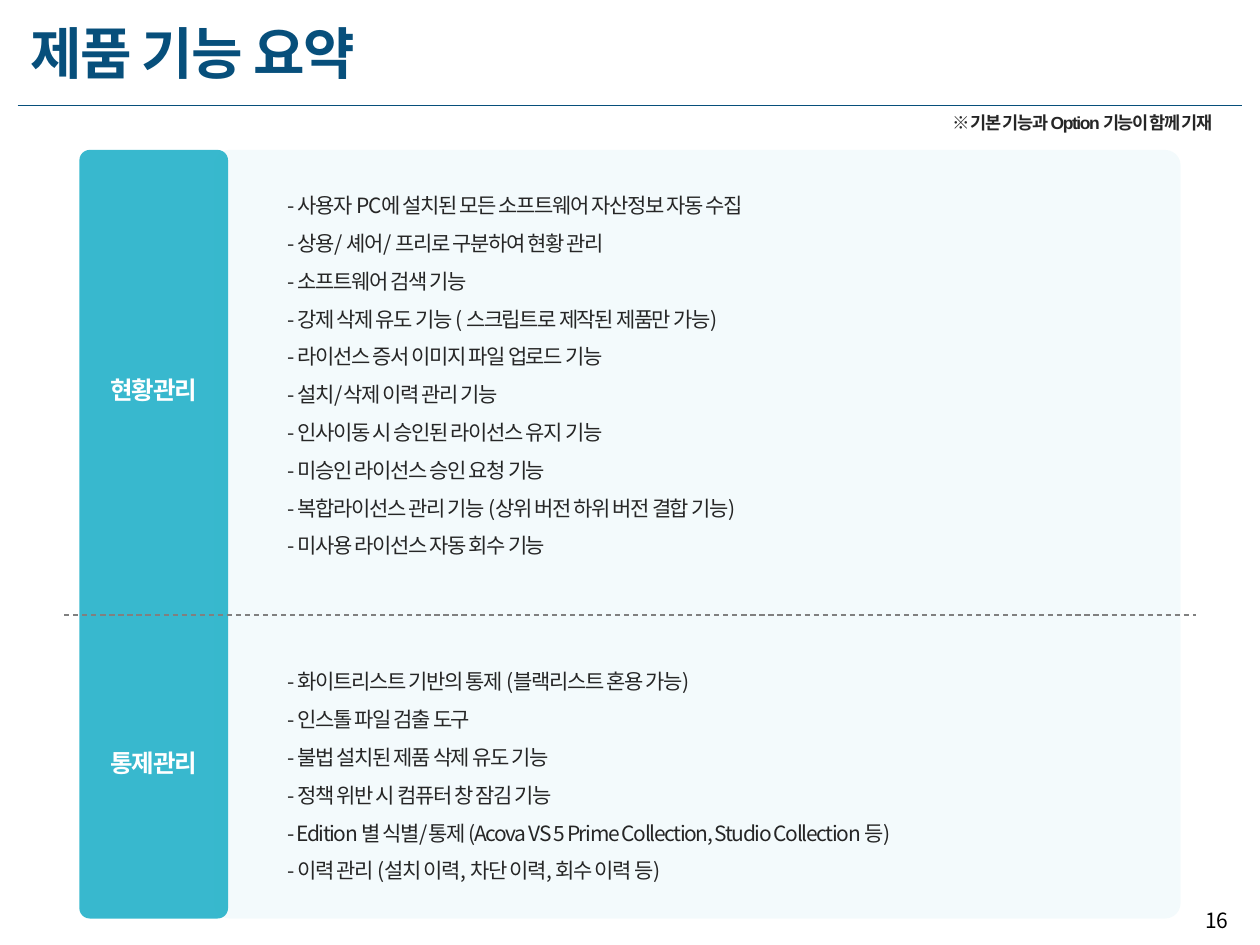
"""Build the product feature summary slide."""
from lxml import etree
from pptx import Presentation
from pptx.dml.color import RGBColor
from pptx.enum.dml import MSO_LINE
from pptx.enum.shapes import MSO_CONNECTOR, MSO_SHAPE
from pptx.enum.text import MSO_ANCHOR, PP_ALIGN
from pptx.oxml.ns import qn
from pptx.util import Inches, Pt

NAVY = RGBColor(0x07, 0x4F, 0x7B)
TEAL = RGBColor(0x20, 0xB0, 0xC8)
INK = RGBColor(0x26, 0x26, 0x26)
GRAY = RGBColor(0x80, 0x80, 0x80)
WHITE = RGBColor(0xFF, 0xFF, 0xFF)
BLACK = RGBColor(0, 0, 0)
KOREAN = "Noto Sans CJK KR"
LEFT, CENTER, RIGHT = PP_ALIGN.LEFT, PP_ALIGN.CENTER, PP_ALIGN.RIGHT
TOP, MIDDLE = MSO_ANCHOR.TOP, MSO_ANCHOR.MIDDLE
DASH = MSO_LINE.DASH

STATUS_FEATURES = [
    "- 사용자 PC에 설치된 모든 소프트웨어 자산정보 자동 수집",
    "- 상용/ 셰어/ 프리로 구분하여 현황 관리",
    "- 소프트웨어 검색 기능",
    "- 강제 삭제 유도 기능 ( 스크립트로 제작된 제품만 가능)",
    "- 라이선스 증서 이미지 파일 업로드 기능",
    "- 설치/삭제 이력 관리 기능",
    "- 인사이동 시 승인된 라이선스 유지 기능",
    "- 미승인 라이선스 승인 요청 기능",
    "- 복합라이선스 관리 기능 (상위 버전 하위 버전 결합 기능)",
    "- 미사용 라이선스 자동 회수 기능",
]
CONTROL_FEATURES = [
    "- 화이트리스트 기반의 통제 (블랙리스트 혼용 가능)",
    "- 인스톨 파일 검출 도구",
    "- 불법 설치된 제품 삭제 유도 기능",
    "- 정책 위반 시 컴퓨터 창 잠김 기능",
    "- Edition 별 식별/통제 (Acova VS 5 Prime Collection, Studio Collection 등)",
    "- 이력 관리 (설치 이력, 차단 이력, 회수 이력 등)",
]

prs = Presentation()
prs.slide_width, prs.slide_height = Inches(10), Inches(7.5)
slide = prs.slides.add_slide(prs.slide_layouts[6])


def add_text(lines, left, top, width, height, *, size, color=INK, font="Arial",
             bold=False, align=LEFT, anchor=TOP, line_spacing=1.0, tracking=-80):
    box = slide.shapes.add_textbox(
        Inches(left), Inches(top), Inches(width), Inches(height))
    frame = box.text_frame
    frame.word_wrap = True
    frame.vertical_anchor = anchor
    frame.text = "\n".join(lines)
    for paragraph in frame.paragraphs:
        paragraph.alignment = align
        paragraph.line_spacing = line_spacing
        for run in paragraph.runs:
            run.font.size = Pt(size)
            run.font.bold = bold
            run.font.name = font
            run.font.color.rgb = color
            properties = run.font._element
            properties.set("spc", str(tracking))
            etree.SubElement(properties, qn("a:ea")).set("typeface", KOREAN)


def add_rule(left, right, y, color, dash=None):
    rule = slide.shapes.add_connector(
        MSO_CONNECTOR.STRAIGHT, Inches(left), Inches(y), Inches(right), Inches(y))
    rule.line.color.rgb = color
    rule.line.width = Pt(0.75)
    if dash:
        rule.line.dash_style = dash
    etree.SubElement(rule._element.spPr, qn("a:effectLst"))


add_rule(0.14, 9.86, 0.84, NAVY)
add_text(["제품 기능 요약"], 0.14, 0.1, 3.12, 0.64, size=32, color=NAVY, bold=True)

for left, width, rounding, opacity in [(1.7, 7.67, 0.02, 5), (0.63, 1.18, 0.07, 89)]:
    panel = slide.shapes.add_shape(
        MSO_SHAPE.ROUNDED_RECTANGLE,
        Inches(left), Inches(1.19), Inches(width), Inches(6.1))
    panel.adjustments[0] = rounding
    panel.shadow.inherit = False
    panel.line.fill.background()
    panel.fill.solid()
    panel.fill.fore_color.rgb = TEAL
    tint = panel._element.spPr.find(qn("a:solidFill"))[0]
    etree.SubElement(tint, qn("a:alpha")).set("val", str(opacity * 1000))

for label, label_top, features, top, width, height in [
    ("현황관리", 2.93, STATUS_FEATURES, 1.38, 4.28, 3.13),
    ("통제관리", 5.89, CONTROL_FEATURES, 5.16, 5.29, 1.92),
]:
    add_text(features, 2.18, top, width, height,
             size=12, font=KOREAN, line_spacing=1.5)
    add_text([label], 0.75, label_top, 0.94, 0.34,
             size=14, color=WHITE, bold=True, align=CENTER)

add_rule(0.51, 9.49, 4.88, GRAY, DASH)
add_text(["16"], 9.41, 7.1, 0.44, 0.4, size=12, color=BLACK, font=KOREAN,
         align=RIGHT, anchor=MIDDLE, tracking=0)
add_text(["※ 기본 기능과 Option 기능이 함께 기재"], 7.46, 0.84, 2.47, 0.27,
         size=10, bold=True)

prs.save("out.pptx")
